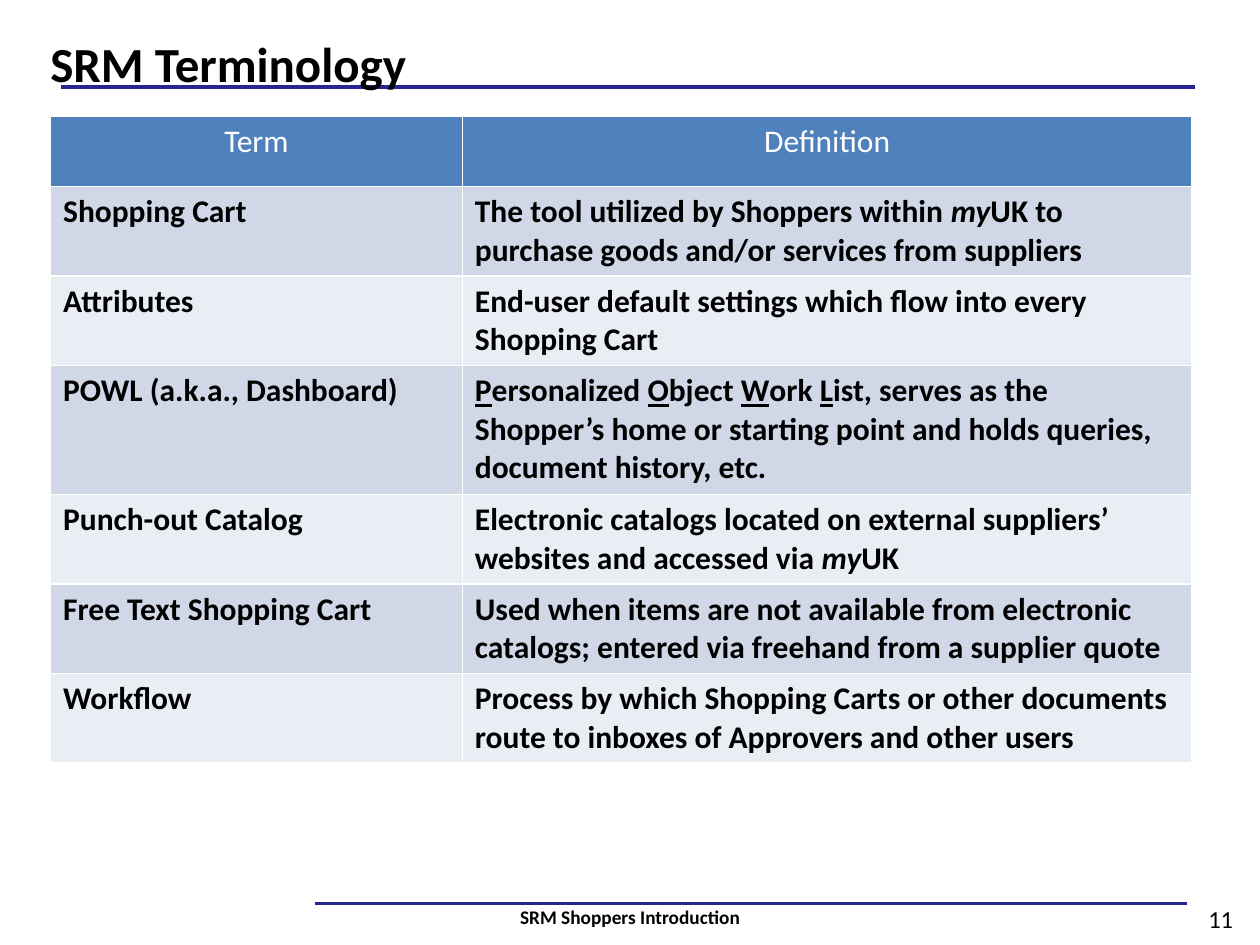
from lxml.etree import SubElement
from pptx import Presentation
from pptx.dml.color import RGBColor
from pptx.enum.shapes import MSO_CONNECTOR
from pptx.enum.text import MSO_ANCHOR, PP_ALIGN
from pptx.oxml.ns import qn
from pptx.util import Cm, Pt

# Content: a definition is a list of (text, style) runs
TITLE = "SRM Terminology"
FOOTER = "SRM Shoppers Introduction"
PAGE_NUMBER = "11"
HEADINGS = ("Term", "Definition")
TERMS = [
    ("Shopping Cart", [
        ("The tool utilized by Shoppers within ", ""), ("my", "italic"),
        ("UK to purchase goods and/or services from suppliers", "")]),
    ("Attributes", [
        ("End-user default settings which flow into every Shopping Cart", "")]),
    ("POWL (a.k.a., Dashboard)", [
        ("P", "underline"), ("ersonalized ", ""),
        ("O", "underline"), ("bject ", ""),
        ("W", "underline"), ("ork ", ""),
        ("L", "underline"),
        ("ist, serves as the Shopper’s home or starting point and holds "
         "queries, document history, etc.", "")]),
    ("Punch-out Catalog", [
        ("Electronic catalogs located on external suppliers’ websites and "
         "accessed via ", ""), ("my", "italic"), ("UK", "")]),
    ("Free Text Shopping Cart", [
        ("Used when items are not available from electronic catalogs; "
         "entered via freehand from a supplier quote", "")]),
    ("Workflow", [
        ("Process by which Shopping Carts or other documents route to "
         "inboxes of Approvers and other users", "")]),
]

# Layout in centimetres
COLUMN_WIDTHS = (8.3, 14.71)
ROW_HEIGHTS = (1.42, 1.8, 1.8, 2.6, 1.8, 1.8, 1.8)
RULES = [(1.22, 24.08, 1.75, 2.25), (6.35, 23.93, 18.21, 1.5)]  # x1, x2, y, points

FONT = "Calibri"
BLACK, WHITE, NAVY = "000000", "FFFFFF", "252595"
HEADING_FILL = "4F81BD"
BAND_FILLS = ("D0D8E8", "E9EDF4")


def paint(color_format, color):
    color_format.rgb = RGBColor.from_string(color)


def format_runs(paragraph, size, color=BLACK, bold=False, align=PP_ALIGN.LEFT):
    paragraph.alignment = align
    for run in paragraph.runs:
        run.font.name = FONT
        run.font.size = Pt(size)
        run.font.bold = bold
        paint(run.font.color, color)


def fill_cell(cell, color):
    cell.fill.solid()
    paint(cell.fill.fore_color, color)


def add_rule(slide, left, right, y, weight):
    rule = slide.shapes.add_connector(
        MSO_CONNECTOR.STRAIGHT, Cm(left), Cm(y), Cm(right), Cm(y))
    paint(rule.line.color, NAVY)
    rule.line.width = Pt(weight)
    SubElement(rule._element.spPr, qn("a:effectLst"))


def add_label(slide, text, left, top, width, size, bold):
    label = slide.shapes.add_textbox(Cm(left), Cm(top), Cm(width), Cm(1.02))
    frame = label.text_frame
    frame.word_wrap = True
    frame.vertical_anchor = MSO_ANCHOR.MIDDLE
    frame.text = text
    format_runs(frame.paragraphs[0], size, bold=bold, align=PP_ALIGN.CENTER)


def add_terms(slide):
    table = slide.shapes.add_table(
        len(TERMS) + 1, len(HEADINGS), Cm(1.02), Cm(2.34),
        Cm(sum(COLUMN_WIDTHS)), Cm(sum(ROW_HEIGHTS))).table
    for column, width in zip(table.columns, COLUMN_WIDTHS):
        column.width = Cm(width)
    for row, height in zip(table.rows, ROW_HEIGHTS):
        row.height = Cm(height)

    for cell, heading in zip(table.rows[0].cells, HEADINGS):
        fill_cell(cell, HEADING_FILL)
        cell.text_frame.text = heading
        format_runs(cell.text_frame.paragraphs[0], 18, WHITE, align=PP_ALIGN.CENTER)

    for index, (term, definition) in enumerate(TERMS):
        for column, parts in enumerate(([(term, "")], definition)):
            cell = table.cell(index + 1, column)
            fill_cell(cell, BAND_FILLS[index % 2])
            paragraph = cell.text_frame.paragraphs[0]
            for text, style in parts:
                run = paragraph.add_run()
                run.text = text
                if style:
                    setattr(run.font, style, True)
            format_runs(paragraph, 18, bold=True)


def main():
    prs = Presentation()
    prs.slide_width, prs.slide_height = Cm(25.4), Cm(19.05)
    slide = prs.slides.add_slide(prs.slide_layouts[5])

    # Rules, kept behind the title
    for rule in RULES:
        add_rule(slide, *rule)

    # Title
    title = slide.shapes.title
    title.left, title.top, title.width, title.height = Cm(0.76), Cm(0.25), Cm(23.37), Cm(2.03)
    title.text_frame.text = TITLE
    title.text_frame.vertical_anchor = MSO_ANCHOR.MIDDLE
    format_runs(title.text_frame.paragraphs[0], 28, bold=True)
    slide.shapes._spTree.append(title._element)

    # Table and footer
    add_terms(slide)
    add_label(slide, FOOTER, 5.11, 17.98, 15.19, 11, True)
    add_label(slide, PAGE_NUMBER, 23.85, 18.01, 1.52, 14, False)

    prs.save("out.pptx")


if __name__ == "__main__":
    main()
